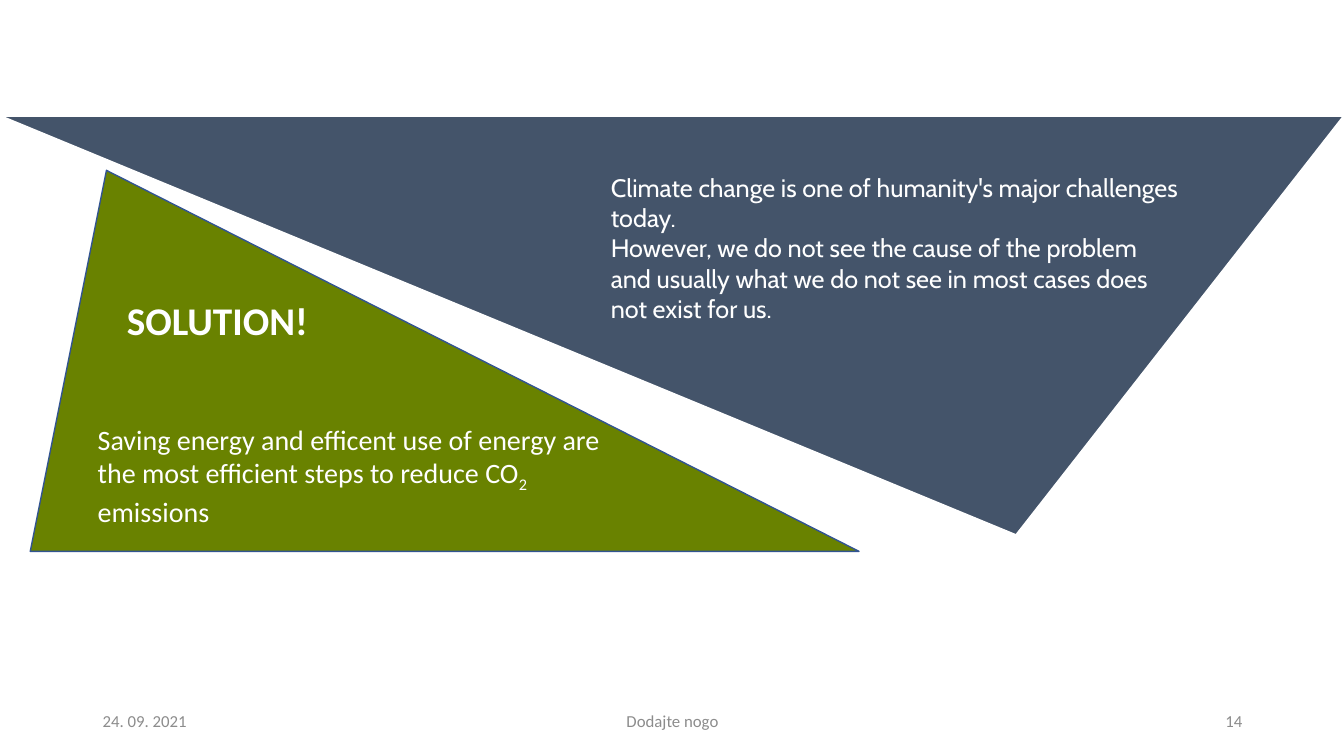
import pptx
import pptx.dml.color
import pptx.enum.shapes
import pptx.enum.text
import pptx.util

RGBColor = pptx.dml.color.RGBColor
ALIGN = pptx.enum.text.PP_ALIGN
ANCHOR = pptx.enum.text.MSO_ANCHOR

WHITE = RGBColor(0xFF, 0xFF, 0xFF)
SLATE = RGBColor(0x44, 0x54, 0x6A)
GREEN = RGBColor(0x69, 0x82, 0x00)
BLUE = RGBColor(0x32, 0x54, 0x91)
GREY = RGBColor(0x8C, 0x8C, 0x8C)

EMU_PER_PX = 9144  # 100 px to the inch


def px(length):
    return pptx.util.Emu(length * EMU_PER_PX)


class Page:
    """Holds the text style and the slide being filled."""

    font = "Calibri"
    color = WHITE

    def __init__(self, slide):
        self.slide = slide

    def triangle(self, box, apex, fill, line, width, rotation=0):
        shape = self.slide.shapes.add_shape(
            pptx.enum.shapes.MSO_SHAPE.ISOSCELES_TRIANGLE, *map(px, box))
        shape.adjustments[0] = apex
        shape.rotation = rotation
        shape.shadow.inherit = False
        shape.fill.solid()
        shape.fill.fore_color.rgb = fill
        shape.line.color.rgb = line
        shape.line.width = pptx.util.Pt(width)

    def text(self, box, paragraphs, size, font=None, color=None, bold=False,
             align=ALIGN.LEFT, anchor=ANCHOR.TOP):
        """Each paragraph is a list of (text, baseline in percent) runs."""
        frame = self.slide.shapes.add_textbox(*map(px, box)).text_frame
        frame.word_wrap = True
        frame.vertical_anchor = anchor
        for index, runs in enumerate(paragraphs):
            paragraph = frame.add_paragraph() if index else frame.paragraphs[0]
            paragraph.alignment = align
            paragraph.font.name = font or self.font
            paragraph.font.size = pptx.util.Pt(size)
            paragraph.font.bold = bold
            paragraph.font.color.rgb = color or self.color
            for words, baseline in runs:
                run = paragraph.add_run()
                run.text = words
                if baseline:
                    run._r.get_or_add_rPr().set("baseline", str(baseline * 1000))

    def footer(self, left, width, words, align):
        self.text((left, 695, width, 40), [[(words, 0)]], 12, color=GREY,
                  align=align, anchor=ANCHOR.MIDDLE)


def main():
    deck = pptx.Presentation()
    deck.slide_width, deck.slide_height = px(1333), px(750)
    page = Page(deck.slides.add_slide(deck.slide_layouts[6]))

    # Footer: date, footer text, slide number
    page.footer(92, 300, "24. 09. 2021", ALIGN.LEFT)
    page.footer(442, 450, "Dodajte nogo", ALIGN.CENTER)
    page.footer(942, 300, "14", ALIGN.RIGHT)

    # Problem
    page.triangle((0, 115, 1333, 416), 0.244, SLATE, WHITE, 1.5, rotation=180)
    page.text((596, 166, 583, 192), [
        [("Climate change is one of humanity's major challenges today.", 0)],
        [("However, we do not see the cause of the problem and usually what "
          "we do not see in most cases does not exist for us.", 0)],
    ], 18, font="Cabin")

    # Solution
    page.triangle((30, 169, 822, 378), 0.092, GREEN, BLUE, 1)
    page.text((116, 289, 400, 57), [[("SOLUTION!", 0)]], 28, bold=True)
    page.text((87, 414, 528, 111), [[
        ("Saving energy and efficent use of energy are the most efficient "
         "steps to reduce CO", 0),
        ("2 ", -25),
        ("emissions", 0),
    ]], 20)

    deck.save("out.pptx")


if __name__ == "__main__":
    main()
